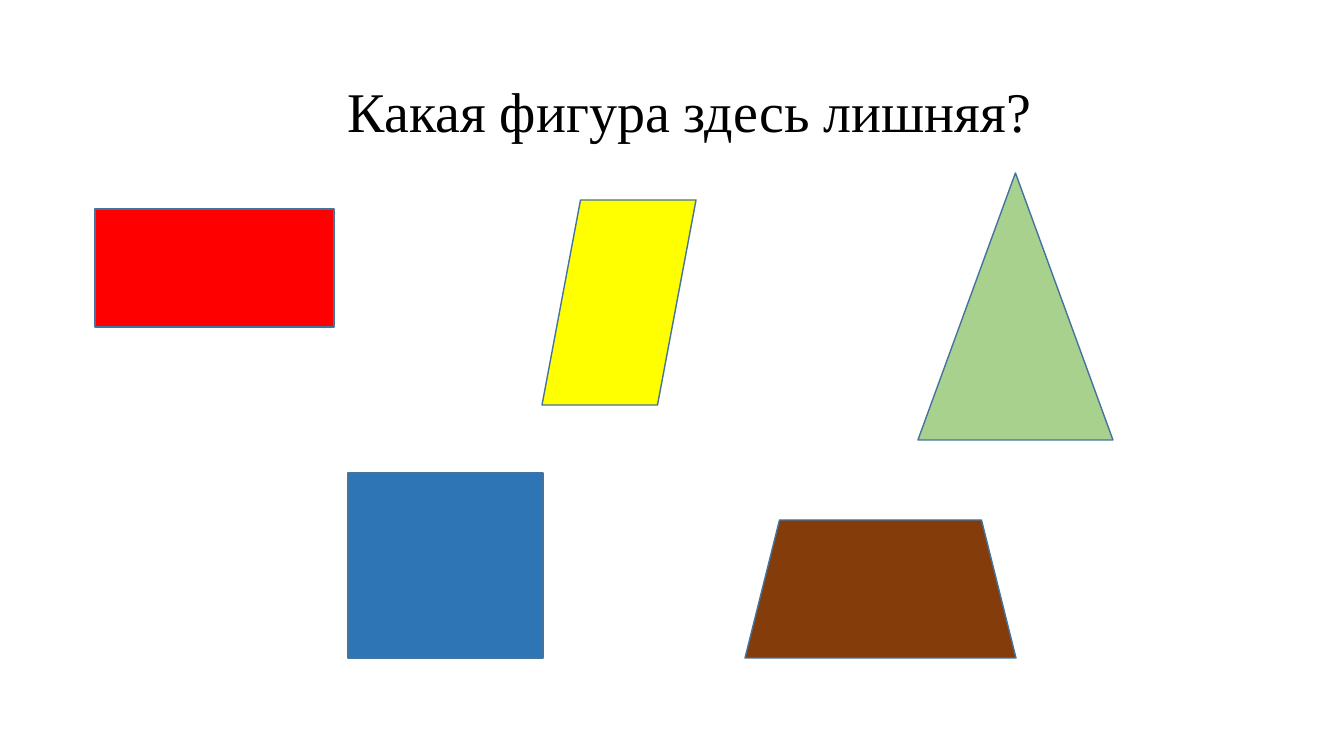
from pptx import Presentation
from pptx import util as u
from pptx.dml.color import RGBColor
from pptx.enum import shapes, text

BLACK = RGBColor(0x00, 0x00, 0x00)
RED = RGBColor(0xFF, 0x00, 0x00)
GREEN = RGBColor(0xA9, 0xD1, 0x8E)
BLUE = RGBColor(0x2E, 0x75, 0xB6)
BROWN = RGBColor(0x84, 0x3C, 0x0B)
YELLOW = RGBColor(0xFF, 0xFF, 0x00)
OUTLINE = RGBColor(0x43, 0x73, 0x9E)


def px(length):
    return u.Emu(round(length * 12192000 / 1344))


presentation = Presentation()
presentation.slide_width = px(1344)
presentation.slide_height = px(756)
slide = presentation.slides.add_slide(presentation.slide_layouts[5])

title = slide.shapes.title
title.left, title.top, title.width, title.height = px(110), px(41), px(1159), px(146)
title.text_frame.text = "Какая фигура здесь лишняя?"
title.text_frame.vertical_anchor = text.MSO_ANCHOR.MIDDLE
paragraph = title.text_frame.paragraphs[0]
paragraph.alignment = text.PP_ALIGN.CENTER
paragraph.line_spacing = 0.9
paragraph.font.name = "Times New Roman"
paragraph.font.size = u.Pt(40)
paragraph.font.color.rgb = BLACK

kinds = shapes.MSO_SHAPE
figures = [
    (kinds.RECTANGLE, RED, 95, 209, 239, 118),
    (kinds.ISOSCELES_TRIANGLE, GREEN, 918, 173, 195, 267),
    (kinds.RECTANGLE, BLUE, 348, 473, 195, 185),
    (kinds.TRAPEZOID, BROWN, 745, 520, 271, 138),
    (kinds.PARALLELOGRAM, YELLOW, 542, 200, 154, 205),
]
for kind, color, left, top, width, height in figures:
    shape = slide.shapes.add_shape(kind, px(left), px(top), px(width), px(height))
    shape.shadow.inherit = False
    shape.fill.solid()
    shape.fill.fore_color.rgb = color
    shape.line.color.rgb = OUTLINE
    shape.line.width = u.Pt(1)

presentation.save("out.pptx")
